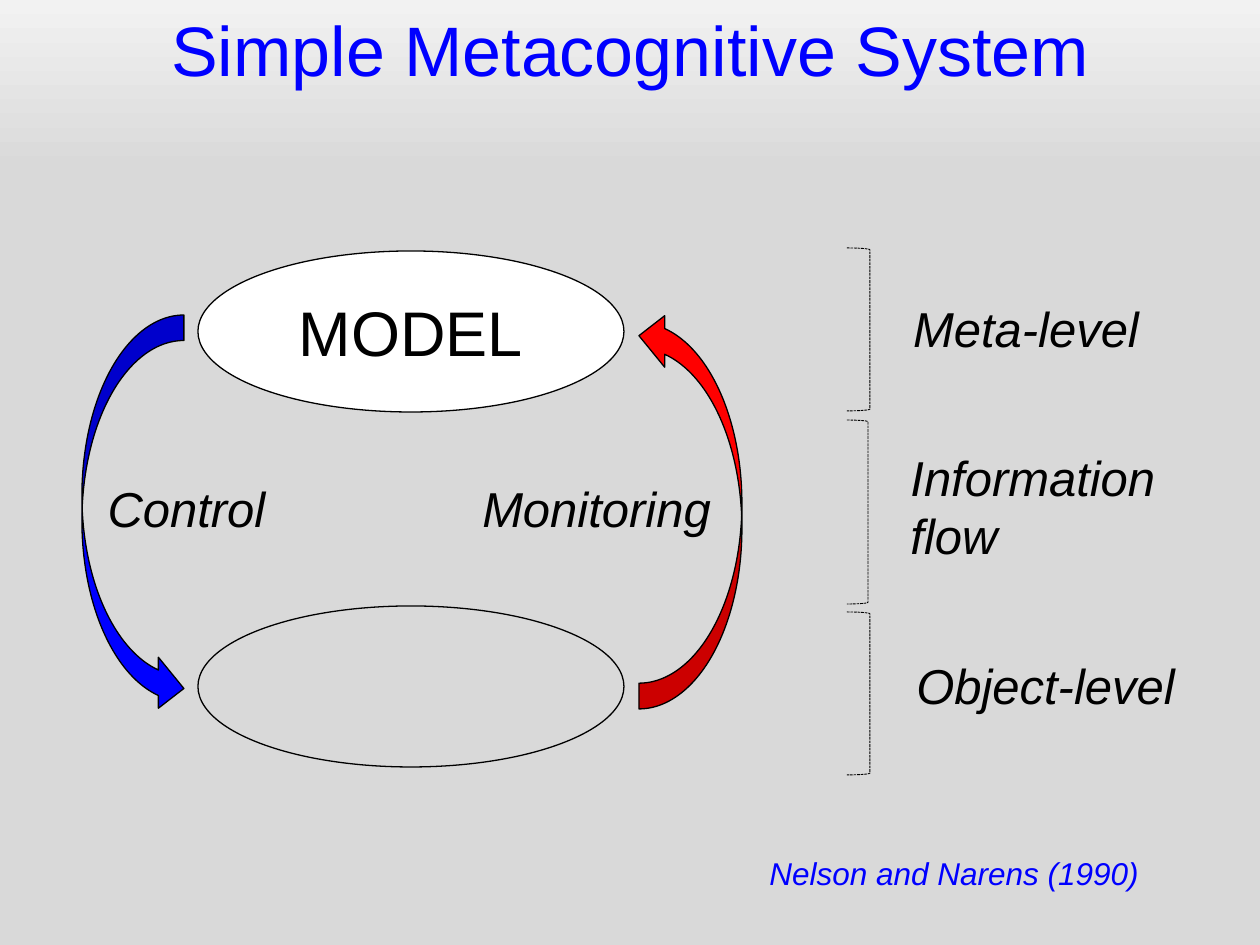
from copy import deepcopy
from pptx import Presentation
from pptx.dml.color import RGBColor
from pptx.enum.dml import MSO_LINE
from pptx.enum.shapes import MSO_SHAPE as SHAPE
from pptx.enum.text import MSO_ANCHOR, MSO_AUTO_SIZE, PP_ALIGN as ALIGN
from pptx.oxml.ns import qn
from pptx.util import Pt

SCALE = 914400 / 126
FONT = "Arial"
COLORS = {
    "black": "000000",
    "white": "FFFFFF",
    "blue": "0000FF",
    "red": "FF0000",
    "gray": "D9D9D9",
    "light": "F2F2F2",
}
BACKDROP = [(0, "light"), (0.18, "gray"), (1, "gray")]

LEVELS = [((198, 251, 426, 161), "white", "MODEL"), ((198, 606, 426, 161), "gray", None)]
ARROWS = [
    ((82, 315, 102, 399), "blue", "flipH"),
    ((639, 310, 103, 399), "red", "flipV"),
]
BRACKETS = [(847, 248, 23, 163), (847, 420, 21, 184), (847, 612, 23, 163)]
LABELS = [
    ("Meta-level", (893, 292, 266, 72), ALIGN.CENTER),
    ("Object-level", (896, 649, 299, 72), ALIGN.CENTER),
    ("Information flow", (898, 441, 282, 130), ALIGN.LEFT),
    ("Monitoring", (456, 472, 281, 72), ALIGN.CENTER),
    ("Control", (78, 472, 217, 72), ALIGN.CENTER),
]
TITLE = ("Simple Metacognitive System", (0, 0, 1260, 97))
CITATION = ("Nelson and Narens (1990)", (680, 848, 548, 50))


def emu(px):
    return round(px * SCALE)


def rgb(name):
    return RGBColor.from_string(COLORS[name])


def write(frame, text, size, color="black", italic=False, align=ALIGN.CENTER):
    frame.word_wrap = True
    para = frame.paragraphs[0]
    para.alignment = align
    span = para.add_run()
    span.text = text
    span.font.name = FONT
    span.font.size = Pt(size)
    span.font.italic = italic
    span.font.color.rgb = rgb(color)


def add_text(slide, text, place, size, **style):
    box = slide.shapes.add_textbox(*map(emu, place))
    write(box.text_frame, text, size, **style)
    box.text_frame.auto_size = MSO_AUTO_SIZE.SHAPE_TO_FIT_TEXT


def add_figure(slide, kind, place, fill=None, width=0.75):
    figure = slide.shapes.add_shape(kind, *map(emu, place))
    figure.shadow.inherit = False
    if fill:
        figure.fill.solid()
        figure.fill.fore_color.rgb = rgb(fill)
    else:
        figure.fill.background()
    figure.line.color.rgb = rgb("black")
    figure.line.width = Pt(width)
    return figure


def paint_background(slide):
    fill = slide.background.fill
    fill.gradient()
    fill.gradient_angle = 270
    last = fill.gradient_stops[1]._gs
    last.addnext(deepcopy(last))
    for stop, (position, color) in zip(fill.gradient_stops, BACKDROP):
        stop.position = position
        stop.color.rgb = rgb(color)


def main():
    deck = Presentation()
    deck.slide_width, deck.slide_height = emu(1260), emu(945)
    slide = deck.slides.add_slide(deck.slide_layouts[6])
    paint_background(slide)

    for place, fill, text in LEVELS:
        ellipse = add_figure(slide, SHAPE.OVAL, place, fill)
        if text:
            ellipse.text_frame.vertical_anchor = MSO_ANCHOR.MIDDLE
            write(ellipse.text_frame, text, 36)

    for place, fill, flip in ARROWS:
        arrow = add_figure(slide, SHAPE.CURVED_LEFT_ARROW, place, fill)
        for index, value in enumerate((0.25, 0.5, 0.25)):
            arrow.adjustments[index] = value
        arrow._element.spPr.find(qn("a:xfrm")).set(flip, "1")

    for place in BRACKETS:
        bracket = add_figure(slide, SHAPE.RIGHT_BRACKET, place, width=0.5)
        bracket.adjustments[0] = 0.08
        bracket.line.dash_style = MSO_LINE.SQUARE_DOT

    for text, place, align in LABELS:
        add_text(slide, text, place, 28, italic=True, align=align)
    add_text(slide, *CITATION, 18, color="blue", italic=True)
    add_text(slide, *TITLE, 40, color="blue")
    deck.save("out.pptx")


if __name__ == "__main__":
    main()
